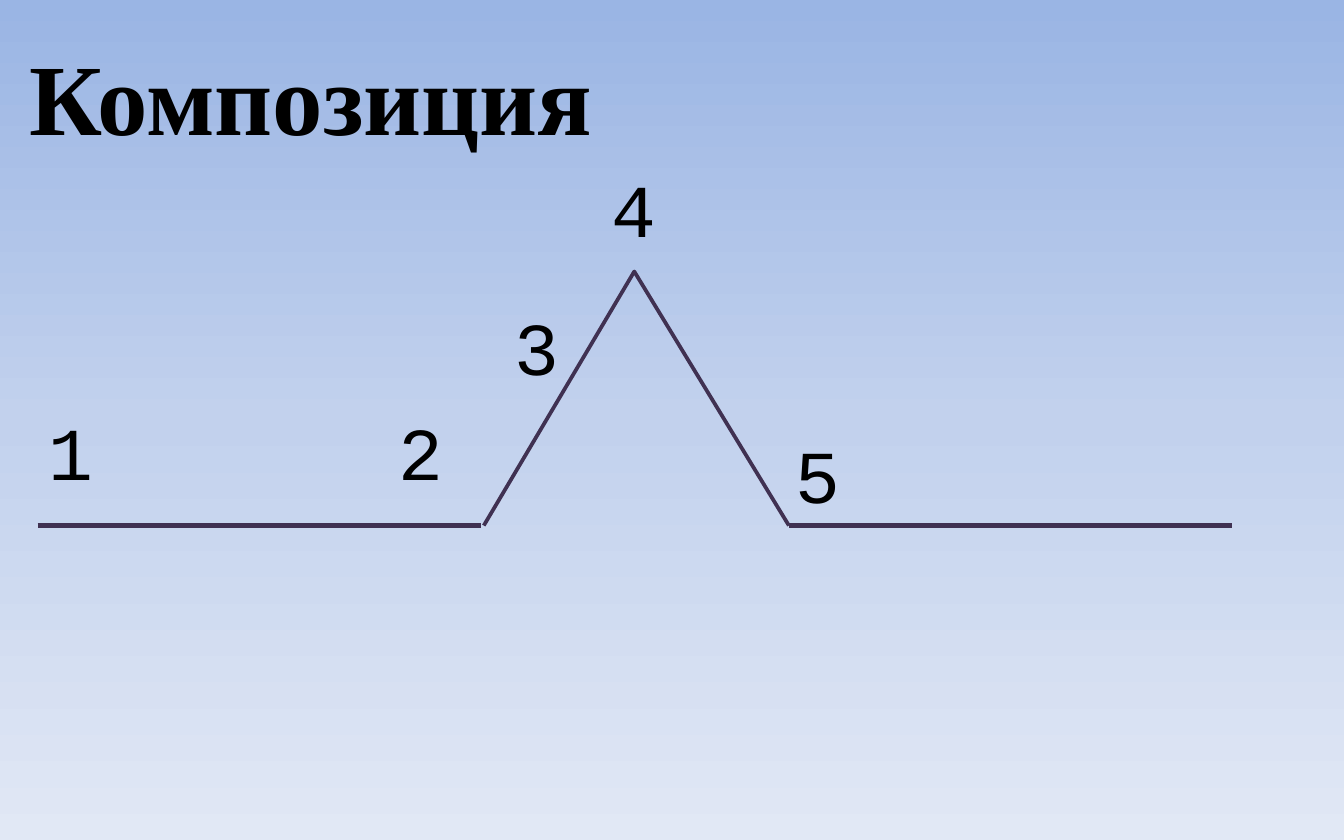
from copy import deepcopy

from lxml.etree import SubElement
from pptx import Presentation
from pptx.dml.color import RGBColor
from pptx.enum.shapes import MSO_CONNECTOR as Connector
from pptx.enum.text import MSO_AUTO_SIZE as AutoSize
from pptx.oxml.ns import qn
from pptx.util import Inches, Pt

BLACK = RGBColor(0x00, 0x00, 0x00)
PLUM = RGBColor(0x40, 0x31, 0x52)
SKY = RGBColor(0x9A, 0xB5, 0xE4)
PALE_BLUE = RGBColor(0xC2, 0xD1, 0xED)
MIST = RGBColor(0xE1, 0xE8, 0xF5)


class PlotSlide:
    """Holds the style and the current slide."""

    heading_font, heading_size = "Times New Roman", Pt(54)
    number_font, number_size = "Courier New", Pt(40)
    line_color = PLUM

    def __init__(self, presentation):
        self.slide = presentation.slides.add_slide(presentation.slide_layouts[1])
        title = self.slide.shapes.title
        title.element.getparent().remove(title.element)

    def background(self, *colors):
        fill = self.slide.background.fill
        fill.gradient()
        fill.gradient_angle = 270
        stop_list = self.slide.element.xpath(".//a:gsLst")[0]
        while len(stop_list) < len(colors):
            stop_list.append(deepcopy(stop_list[0]))
        for index, (stop, color) in enumerate(zip(fill.gradient_stops, colors)):
            stop.position = index / (len(colors) - 1)
            stop.color.rgb = color

    def add_run(self, paragraph, text, font, size, bold=False):
        run = paragraph.add_run()
        run.text = text
        run.font.name, run.font.size, run.font.bold = font, size, bold
        run.font.color.rgb = BLACK

    def heading(self, text, left, top, width, height):
        body = self.slide.placeholders[1]
        body.left, body.top = Inches(left), Inches(top)
        body.width, body.height = Inches(width), Inches(height)
        body.text_frame.auto_size = AutoSize.NONE
        paragraph = body.text_frame.paragraphs[0]
        properties = paragraph._p.get_or_add_pPr()
        properties.set("marL", "0")
        properties.set("indent", "0")
        SubElement(properties, qn("a:buNone"))
        self.add_run(paragraph, text, self.heading_font, self.heading_size, bold=True)

    def number(self, text, left, top, width):
        box = self.slide.shapes.add_textbox(
            Inches(left), Inches(top), Inches(width), Inches(0.77))
        frame = box.text_frame
        frame.word_wrap = True
        frame.auto_size = AutoSize.SHAPE_TO_FIT_TEXT
        self.add_run(frame.paragraphs[0], text, self.number_font, self.number_size)

    def level_line(self, left, right, y):
        line = self.slide.shapes.add_connector(
            Connector.STRAIGHT, Inches(left), Inches(y), Inches(right), Inches(y))
        line.line.color.rgb = self.line_color
        line.line.width = Pt(3)
        SubElement(line.element.spPr, qn("a:effectLst"))

    def peak(self, *points):
        start, *others = [(Inches(x), Inches(y)) for x, y in points]
        builder = self.slide.shapes.build_freeform(*start)
        builder.add_line_segments(others, close=False)
        shape = builder.convert_to_shape()
        shape.shadow.inherit = False
        shape.fill.background()
        shape.line.color.rgb = self.line_color
        shape.line.width = Pt(2)


def main():
    presentation = Presentation()
    presentation.slide_width, presentation.slide_height = Inches(10), Inches(6.25)
    plot = PlotSlide(presentation)
    plot.background(SKY, PALE_BLUE, MIST)
    plot.heading("Композиция", 0.12, 0.21, 9.76, 5.83)

    # Story line: level, rise and fall, level
    base = 3.91
    plot.peak((3.6, base), (4.72, 2.02), (5.87, base))
    for left in (0.28, 5.87):
        plot.level_line(left, left + 3.3, base)

    # Numbers of the plot stages
    for text, left, top, width in (
        ("1", 0.26, 2.97, 0.87),
        ("2", 2.87, 2.97, 0.87),
        ("3", 3.73, 2.19, 0.72),
        ("4", 4.45, 1.16, 0.72),
        ("5", 5.82, 3.14, 0.72),
    ):
        plot.number(text, left, top, width)

    presentation.save("out.pptx")


if __name__ == "__main__":
    main()
